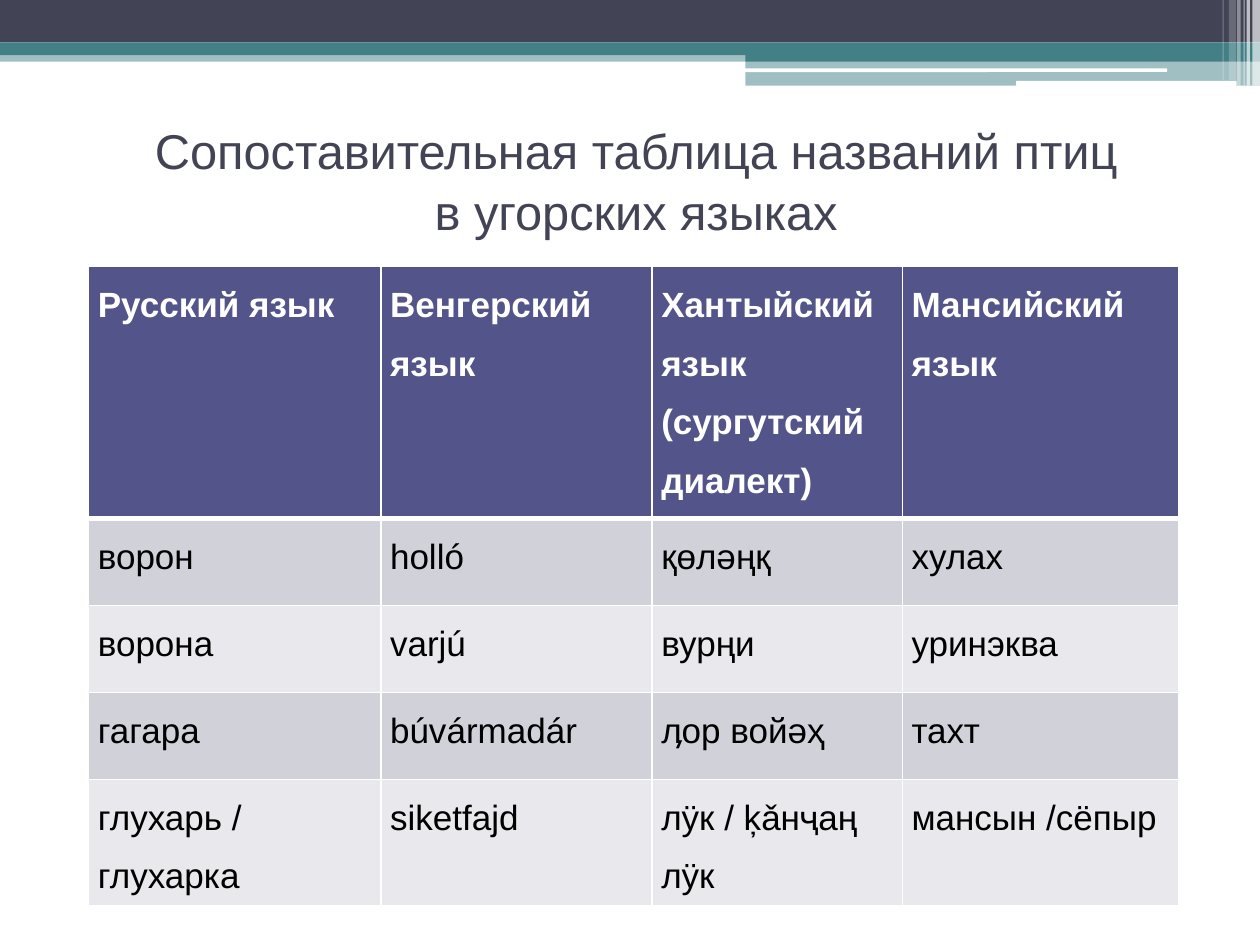
import pptx
import pptx.dml.color
import pptx.enum.shapes
import pptx.enum.text
import pptx.oxml
import pptx.oxml.ns
import pptx.util
from lxml import etree

Pt = pptx.util.Pt
ALIGN = pptx.enum.text.PP_ALIGN
ANCHOR = pptx.enum.text.MSO_ANCHOR
SHAPE = pptx.enum.shapes.MSO_SHAPE

COLORS = {
    "dark": "424456",
    "teal": "438086",
    "white": "FFFFFF",
    "black": "000000",
    "header": "53548A",
    "odd_row": "D1D1DA",
    "even_row": "E9E9ED",
}

# left, top, width, height, colour, opacity in percent
BANDS = [
    (0, 28.8, 720, 6.5, "teal", 50),
    (0, 0, 720, 24.3, "dark", 100),
    (0, 24.3, 720, 7.2, "teal", 100),
    (425.9, 28, 294.1, 7.2, "teal", 100),
    (425.9, 35.2, 294.1, 13.8, "teal", 50),
]
SLITS = [
    (425.7, 39.1, 241.2, 2.1, "white", 100),
    (580.6, 46.2, 126, 2.8, "white", 100),
]
# left, width, height, opacity in percent
STRIPES = [
    (715.6, 4.4, 49, 65),
    (712.3, 2, 49, 65),
    (710.6, 0.7, 49, 60),
    (707, 2, 49, 40),
    (702.2, 4, 46, 20),
    (698.6, 0.7, 46, 30),
]

TITLE_LINES = ["Сопоставительная таблица названий птиц", "в угорских языках"]
COLUMN_WIDTHS = [167, 155, 143, 158]
ROW_HEIGHTS = [141.5, 49.7, 49.7, 49.7, 68.4]
BIRD_NAMES = [
    ["Русский язык", "Венгерский язык", "Хантыйский язык (сургутский диалект)",
     "Мансийский язык"],
    ["ворон", "holló", "қөләңқ", "хулах"],
    ["ворона", "varjú", "вурңи", "уринэква"],
    ["гагара", "búvármadár", "ӆор войәҳ", "тахт"],
    ["глухарь / глухарка", "siketfajd", "лÿк / ķǎнҷаң лÿк", "мансын /сёпыр"],
]

TITLE_FRAME = {"word_wrap": True, "vertical_anchor": ANCHOR.MIDDLE}
TITLE_PARAGRAPH = {"alignment": ALIGN.CENTER, "line_spacing": 1.05}
CELL_MARGINS = {"margin_left": Pt(5.2), "margin_right": Pt(5.2),
                "margin_top": 0, "margin_bottom": 0}
CELL_PARAGRAPH = {"line_spacing": 1.5, "space_after": Pt(10)}


def apply_format(target, values):
    for attribute, value in values.items():
        setattr(target, attribute, value)


def rgb(color):
    return pptx.dml.color.RGBColor.from_string(COLORS[color])


def paint(fill, color):
    fill.solid()
    fill.fore_color.rgb = rgb(color)


def style_font(font, size, color, bold=False):
    apply_format(font, {"name": "Arial", "size": Pt(size), "bold": bold})
    font.color.rgb = rgb(color)


def add_bar(slide, left, top, width, height, color, opacity, outline=SHAPE.RECTANGLE):
    bar = slide.shapes.add_shape(outline, Pt(left), Pt(top), Pt(width), Pt(height))
    bar.shadow.inherit = False
    bar.line.fill.background()
    paint(bar.fill, color)
    if opacity < 100:
        tint = bar.fill._xPr.find(".//" + pptx.oxml.ns.qn("a:srgbClr"))
        etree.SubElement(tint, pptx.oxml.ns.qn("a:alpha"), val=str(opacity * 1000))
    return bar


def add_top_decoration(slide):
    for band in BANDS:
        add_bar(slide, *band)
    for slit in SLITS:
        add_bar(slide, *slit, outline=SHAPE.ROUNDED_RECTANGLE)
    for left, width, height, opacity in STRIPES:
        add_bar(slide, left, 0, width, height, "white", opacity)


def add_title(slide):
    title = slide.shapes.add_textbox(Pt(39.6), Pt(49), Pt(648), Pt(106.6))
    frame = title.text_frame
    apply_format(frame, TITLE_FRAME)
    frame.text = "\n".join(TITLE_LINES)
    for paragraph in frame.paragraphs:
        apply_format(paragraph, TITLE_PARAGRAPH)
        style_font(paragraph.runs[0].font, 27.9, "dark")


def add_borders(cell, widths):
    """Draw white cell edges; widths maps lnL, lnR, lnT and lnB to points."""
    properties = cell._tc.get_or_add_tcPr()
    for position, (edge, width) in enumerate(widths.items()):
        border = pptx.oxml.parse_xml(
            f'<a:{edge} {pptx.oxml.ns.nsdecls("a")} w="{Pt(width)}"><a:solidFill>'
            f'<a:srgbClr val="{COLORS["white"]}"/></a:solidFill></a:{edge}>')
        properties.insert(position, border)


def fill_cell(cell, name, row):
    is_header = row == 0
    cell.text = name
    apply_format(cell, CELL_MARGINS)
    paragraph = cell.text_frame.paragraphs[0]
    apply_format(paragraph, CELL_PARAGRAPH)
    style_font(paragraph.runs[0].font, 20, "white" if is_header else "black", is_header)
    paint(cell.fill, "header" if is_header else "odd_row" if row % 2 else "even_row")
    add_borders(cell, {"lnL": 1, "lnR": 1, "lnT": 3 if row == 1 else 1,
                       "lnB": 3 if is_header else 1})


def add_bird_table(slide):
    table = slide.shapes.add_table(
        len(ROW_HEIGHTS), len(COLUMN_WIDTHS), Pt(50.7), Pt(152.2),
        Pt(sum(COLUMN_WIDTHS)), Pt(sum(ROW_HEIGHTS))).table
    for column, width in zip(table.columns, COLUMN_WIDTHS):
        column.width = Pt(width)
    for row, (height, names) in enumerate(zip(ROW_HEIGHTS, BIRD_NAMES)):
        table.rows[row].height = Pt(height)
        for column, name in enumerate(names):
            fill_cell(table.cell(row, column), name, row)


def main():
    presentation = pptx.Presentation()
    apply_format(presentation, {"slide_width": Pt(720), "slide_height": Pt(540)})
    slide = presentation.slides.add_slide(presentation.slide_layouts[6])
    add_top_decoration(slide)
    add_title(slide)
    add_bird_table(slide)
    presentation.save("out.pptx")


if __name__ == "__main__":
    main()
